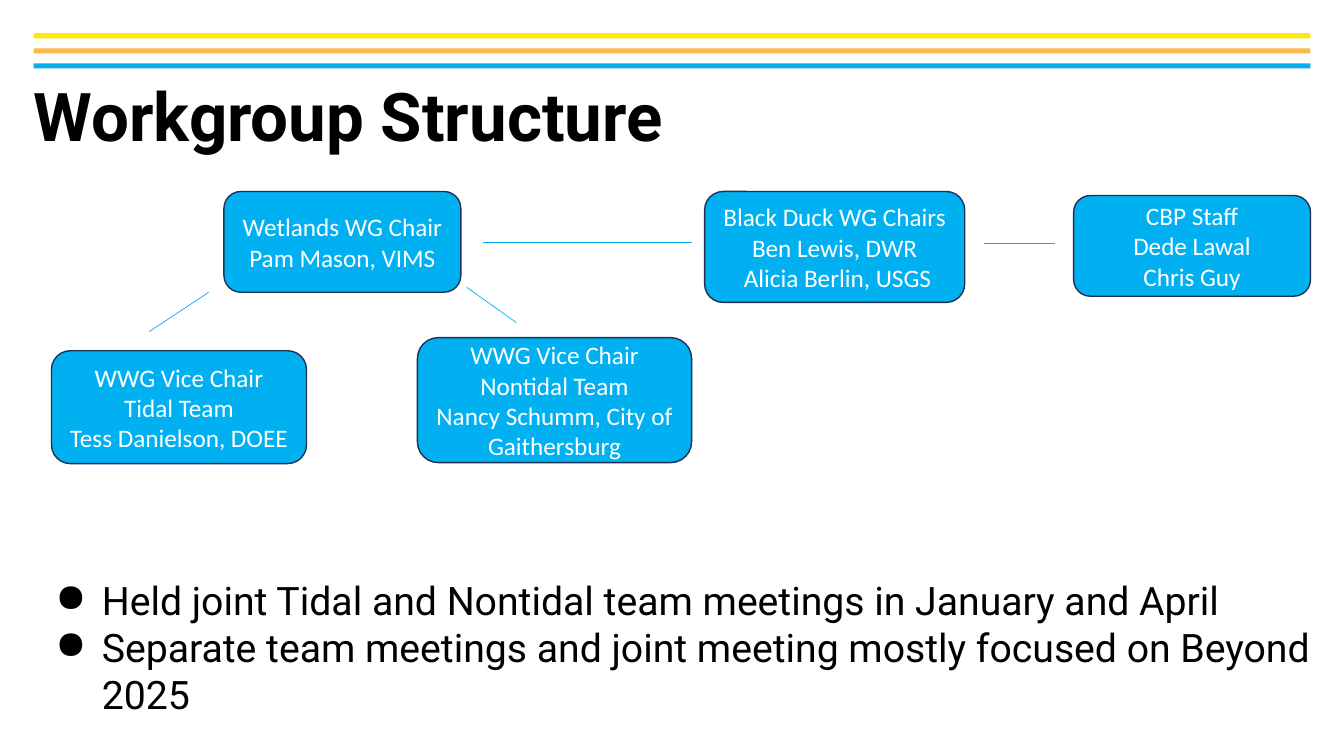
from collections import namedtuple

from lxml.etree import SubElement
from pptx import Presentation
from pptx.dml.color import RGBColor
from pptx.enum.shapes import MSO_CONNECTOR as Connector, MSO_SHAPE as Shape
from pptx.enum.text import MSO_ANCHOR as Anchor, PP_ALIGN as Align
from pptx.oxml.ns import qn
from pptx.util import Inches, Pt

BLACK = RGBColor(0x00, 0x00, 0x00)
WHITE = RGBColor(0xFF, 0xFF, 0xFF)
NAVY = RGBColor(0x1E, 0x32, 0x56)
NODE_BLUE = RGBColor(0x00, 0xB0, 0xF0)
STRIPE_COLORS = [RGBColor(0xFF, 0xE8, 0x09), RGBColor(0xFD, 0xB8, 0x4C),
                 RGBColor(0x06, 0xAE, 0xEF)]

# The slide is a grid of 100 columns by 100 rows
WIDTH, HEIGHT = Inches(13.33), Inches(7.5)
Box = namedtuple("Box", "left top width height")

HEADER = Box(2.5, 4.4, 95, 4.67)
TITLE = Box(2.5, 11.07, 95, 9.73)
CHART = Box(3.83, 25.33, 93.67, 36)
BULLETS = Box(3.83, 76.27, 96, 16.8)

# Chart parts are placed relative to the chart's box
NODES = [
    (Box(12.83, 0, 17.63, 13.33), ["Wetlands WG Chair", "Pam Mason, VIMS"]),
    (Box(48.6, 0, 19.35, 14.67),
     ["Black Duck WG Chairs", "Ben Lewis, DWR", " Alicia Berlin, USGS"]),
    (Box(0, 21.07, 18.98, 14.93),
     ["WWG Vice Chair", "Tidal Team", "Tess Danielson, DOEE"]),
    (Box(27.23, 19.33, 20.4, 16.53),
     ["WWG Vice Chair", "Nontidal Team", "Nancy Schumm, City of Gaithersburg"]),
    (Box(76.05, 0.53, 17.63, 13.33), ["CBP Staff", "Dede Lawal", "Chris Guy"]),
]
LINKS = [
    ((32.1, 6.67), (47.63, 6.67)),
    ((7.28, 18.53), (11.7, 13.33)),
    ((69.38, 6.8), (74.63, 6.8)),
    ((30.9, 12.67), (34.58, 17.33)),
]


def point(column, row):
    return round(WIDTH * column / 100), round(HEIGHT * row / 100)


def place(box):
    return point(box.left, box.top) + point(box.width, box.height)


def write_text(shape, lines, *, size, font, color=BLACK, bold=False,
               align=Align.LEFT, anchor=Anchor.TOP, spacing=1.0,
               inset=None, bullet=None):
    frame = shape.text_frame
    frame.word_wrap = True
    frame.vertical_anchor = anchor
    if inset is not None:
        frame.margin_left = frame.margin_right = inset
        frame.margin_top = frame.margin_bottom = inset
    for index, line in enumerate(lines):
        paragraph = frame.add_paragraph() if index else frame.paragraphs[0]
        paragraph.alignment = align
        paragraph.line_spacing = spacing
        run = paragraph.add_run()
        run.text = line
        run.font.size, run.font.name, run.font.bold = Pt(size), font, bold
        run.font.color.rgb = color
        if bullet:
            add_bullet(paragraph, bullet, color)


def add_bullet(paragraph, character, color):
    properties = paragraph._p.get_or_add_pPr()
    properties.set("marL", str(Inches(0.5)))
    properties.set("indent", str(Inches(-0.46)))
    bullet_color = SubElement(properties, qn("a:buClr"))
    SubElement(bullet_color, qn("a:srgbClr")).set("val", str(color))
    SubElement(properties, qn("a:buChar")).set("char", character)


def add_filled(slide, kind, box, color):
    shape = slide.shapes.add_shape(kind, *place(box))
    shape.shadow.inherit = False
    shape.fill.solid()
    shape.fill.fore_color.rgb = color
    shape.line.fill.background()
    return shape


def add_header(slide, box):
    thickness = 0.67
    step = (box.height - thickness) / (len(STRIPE_COLORS) - 1)
    for index, color in enumerate(STRIPE_COLORS):
        stripe = Box(box.left, box.top + index * step, box.width, thickness)
        add_filled(slide, Shape.RECTANGLE, stripe, color)


def add_title(slide, box):
    write_text(slide.shapes.add_textbox(*place(box)), ["Workgroup Structure"],
               size=48, font="Roboto", bold=True, spacing=0.9, inset=0)


def add_bullets(slide, box):
    write_text(slide.shapes.add_textbox(*place(box)), [
        "Held joint Tidal and Nontidal team meetings in January and April",
        "Separate team meetings and joint meeting mostly focused on Beyond 2025",
    ], size=28, font="Roboto", inset=0, bullet="●")


def add_chart_of_roles(slide, box):
    # Role boxes
    for node, lines in NODES:
        node = node._replace(left=box.left + node.left, top=box.top + node.top)
        shape = add_filled(slide, Shape.ROUNDED_RECTANGLE, node, NODE_BLUE)
        shape.line.color.rgb = NAVY
        shape.line.width = Pt(1)
        write_text(shape, lines, size=18, font="Calibri", color=WHITE,
                   align=Align.CENTER, anchor=Anchor.MIDDLE)
    # Links between roles
    for ends in LINKS:
        start, end = [point(box.left + x, box.top + y) for x, y in ends]
        link = slide.shapes.add_connector(Connector.STRAIGHT, *start, *end)
        link.line.color.rgb = NODE_BLUE
        link.line.width = Pt(0.5)
        SubElement(link._element.spPr, qn("a:effectLst"))


def main():
    presentation = Presentation()
    presentation.slide_width, presentation.slide_height = WIDTH, HEIGHT
    slide = presentation.slides.add_slide(presentation.slide_layouts[6])
    add_header(slide, HEADER)
    add_title(slide, TITLE)
    add_bullets(slide, BULLETS)
    add_chart_of_roles(slide, CHART)
    presentation.save("out.pptx")


if __name__ == "__main__":
    main()
